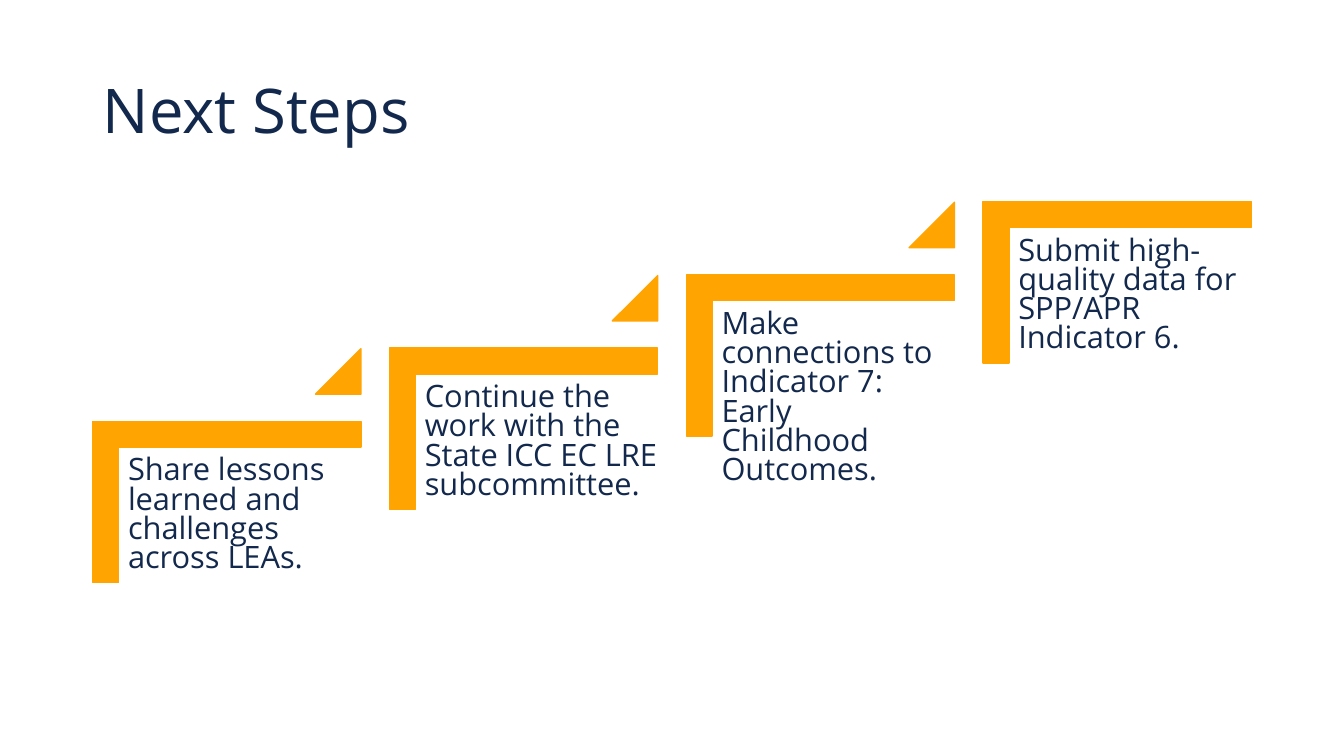
"""Build the Next Steps slide: four rising steps joined by corner triangles."""
import pptx
import pptx.dml.color
import pptx.enum.shapes
import pptx.enum.text
import pptx.util
from pptx.util import Inches

THEME = {
    "font": "Open Sans",
    "navy": pptx.dml.color.RGBColor.from_string("12284C"),
    "orange": pptx.dml.color.RGBColor.from_string("FFA400"),
    "title_size": pptx.util.Pt(44),
    "step_size": pptx.util.Pt(22),
    "line_width": pptx.util.Pt(1),
}
SHAPES = pptx.enum.shapes.MSO_SHAPE
ANCHORS = pptx.enum.text.MSO_ANCHOR

STEPS = [
    ("Share lessons learned and challenges across LEAs.", 2.4),
    ("Continue the work with the State ICC EC LRE subcommittee.", 2.68),
    ("Make connections to Indicator 7: Early Childhood Outcomes.", 2.4),
    ("Submit high-quality data for SPP/APR Indicator 6.", 2.4),
]
FIRST_LEFT, LAST_LEFT = 1.45, 10.28
FIRST_TOP, LAST_TOP = 3.65, 1.47

presentation = pptx.Presentation()
presentation.slide_width = Inches(13.33)
presentation.slide_height = Inches(7.5)
slide = presentation.slides.add_slide(presentation.slide_layouts[6])


def add_orange_shape(kind, left, top, width, height, adjustments):
    shape = slide.shapes.add_shape(kind, Inches(left), Inches(top), Inches(width), Inches(height))
    for index, value in enumerate(adjustments):
        shape.adjustments[index] = value
    shape.shadow.inherit = False
    shape.fill.solid()
    shape.fill.fore_color.rgb = THEME["orange"]
    shape.line.color.rgb = THEME["orange"]
    shape.line.width = THEME["line_width"]
    return shape


def add_text(text, left, top, width, height, size, line_spacing, frame_format):
    box = slide.shapes.add_textbox(Inches(left), Inches(top), Inches(width), Inches(height))
    frame = box.text_frame
    for name, value in {"word_wrap": True, **frame_format}.items():
        setattr(frame, name, value)
    paragraph = frame.paragraphs[0]
    paragraph.line_spacing = line_spacing
    run = paragraph.add_run()
    run.text = text
    for name, value in {"name": THEME["font"], "size": size}.items():
        setattr(run.font, name, value)
    run.font.color.rgb = THEME["navy"]


step_margins = {f"margin_{side}": Inches(0.09) for side in ("left", "top", "right", "bottom")}
last_index = len(STEPS) - 1

for index, (text, text_width) in enumerate(STEPS):
    left = FIRST_LEFT + (LAST_LEFT - FIRST_LEFT) * index / last_index
    top = FIRST_TOP + (LAST_TOP - FIRST_TOP) * index / last_index
    corner = add_orange_shape(SHAPES.CORNER, left, top, 1.6, 2.66, [0.16, 0.16])
    corner.rotation = 90
    add_text(text, left - 0.27, top + 0.8, text_width, 2.11, THEME["step_size"], 0.79, step_margins)
    if index < last_index:
        add_orange_shape(SHAPES.ISOSCELES_TRIANGLE, left + 1.68, top - 0.19, 0.45, 0.45, [1])

add_text("Next Steps", 0.92, 0.4, 11.5, 1.45, THEME["title_size"], 0.9,
         {"vertical_anchor": ANCHORS.MIDDLE})

presentation.save("out.pptx")
